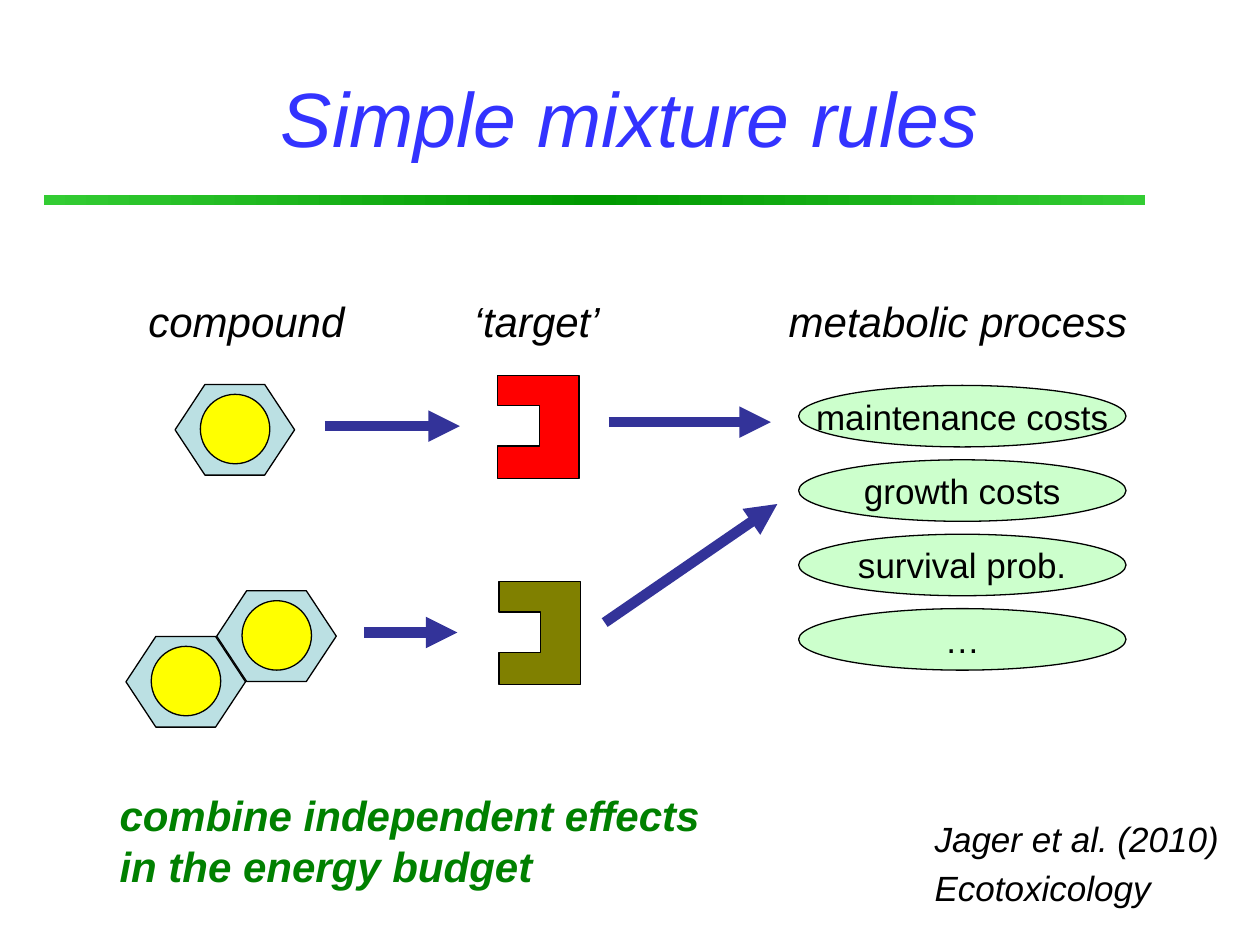
from copy import deepcopy

from lxml import etree
from pptx import Presentation
from pptx.dml.color import RGBColor
from pptx.enum.shapes import MSO_CONNECTOR, MSO_SHAPE
from pptx.enum.text import MSO_ANCHOR, PP_ALIGN
from pptx.oxml.ns import qn
from pptx.util import Cm, Pt

RECTANGLE, HEXAGON, OVAL = MSO_SHAPE.RECTANGLE, MSO_SHAPE.HEXAGON, MSO_SHAPE.OVAL
STRAIGHT = MSO_CONNECTOR.STRAIGHT
LEFT, CENTER = PP_ALIGN.LEFT, PP_ALIGN.CENTER
TOP, MIDDLE = MSO_ANCHOR.TOP, MSO_ANCHOR.MIDDLE

FONT = "Arial"
COLORS = {
    "title": "3333FF",
    "bar_edge": "33CC33",
    "bar_middle": "009900",
    "ink": "000000",
    "hexagon": "BBE0E3",
    "core": "FFFF00",
    "red_target": "FF0000",
    "olive_target": "808000",
    "arrow": "333399",
    "process": "CCFFCC",
    "takeaway": "008000",
}


def color(name):
    return RGBColor.from_string(COLORS[name])


def style_shape(shape, fill):
    shape.shadow.inherit = False
    shape.fill.solid()
    shape.fill.fore_color.rgb = color(fill)
    shape.line.color.rgb = color("ink")
    shape.line.width = Pt(0.75)


def add_shape(slide, kind, box, fill):
    shape = slide.shapes.add_shape(kind, *map(Cm, box))
    style_shape(shape, fill)
    return shape


def write_lines(shape, lines, size, ink="ink", bold=False, italic=True,
                align=LEFT, anchor=TOP, wrap=False, space_before=0):
    frame = shape.text_frame
    frame.text = "\n".join(lines)
    frame.word_wrap = wrap
    frame.vertical_anchor = anchor
    for paragraph in frame.paragraphs:
        paragraph.alignment = align
        paragraph.space_before = Pt(space_before)
        font = paragraph.font
        font.name, font.size = FONT, Pt(size)
        font.bold, font.italic = bold, italic
        font.color.rgb = color(ink)


def add_text(slide, box, lines, size, **options):
    write_lines(slide.shapes.add_textbox(*map(Cm, box)), lines, size, **options)


def add_arrow(slide, start, end):
    arrow = slide.shapes.add_connector(STRAIGHT, *map(Cm, start + end))
    arrow.line.color.rgb = color("arrow")
    arrow.line.width = Pt(6)
    etree.SubElement(arrow.line._get_or_add_ln(), qn("a:tailEnd"), type="triangle")
    etree.SubElement(arrow._element.spPr, qn("a:effectLst"))


def add_header(slide, left, top, width, height):
    """Title with a green gradient bar under it."""
    bar = slide.shapes.add_shape(
        RECTANGLE, Cm(left - 0.38), Cm(top + height), Cm(22.2), Cm(0.2))
    bar.shadow.inherit = False
    bar.line.fill.background()
    bar.fill.gradient()
    bar.fill.gradient_angle = 0
    for stop, name in zip(bar.fill.gradient_stops, ("bar_edge", "bar_middle")):
        stop.color.rgb = color(name)
    first, middle = bar._element.spPr.iter(qn("a:gs"))
    last = deepcopy(first)
    middle.addnext(last)
    for stop, position in ((first, 0), (middle, 50000), (last, 100000)):
        stop.set("pos", str(position))

    add_text(slide, (left, top, width, height), ["Simple mixture rules"], 44,
             ink="title", align=CENTER, anchor=MIDDLE, wrap=True)


def add_ring(slide, left, top):
    """Hexagon with a round core: one ring of a compound."""
    hexagon = add_shape(slide, HEXAGON, (left, top, 2.41, 1.83), "hexagon")
    hexagon.adjustments[0] = 0.33
    add_shape(slide, OVAL, (left + 0.51, top + 0.2, 1.4, 1.4), "core")


def add_target(slide, left, top, fill):
    """Block with a binding notch in its left side."""
    width, height, notch_depth, notch_top, notch_bottom = 1.64, 2.07, 0.84, 0.61, 1.42
    outline = [(0, 0), (width, 0), (width, height), (0, height),
               (0, notch_bottom), (notch_depth, notch_bottom),
               (notch_depth, notch_top), (0, notch_top)]
    points = [(Cm(left + x), Cm(top + y)) for x, y in outline]
    builder = slide.shapes.build_freeform(*points[0])
    builder.add_line_segments(points[1:], close=True)
    style_shape(builder.convert_to_shape(), fill)


def add_pathway(slide, left, top, rings, target, fill, arrows):
    """Compound, its target and the arrows, relative to the left and top."""
    for x, y in rings:
        add_ring(slide, left + x, top + y)
    add_target(slide, left + target[0], top + target[1], fill)
    for x1, y1, x2, y2 in arrows:
        add_arrow(slide, (left + x1, top + y1), (left + x2, top + y2))


def add_headings(slide, top):
    for left, width, heading in ((2.74, 4.52, "compound"), (9.3, 3.07, "‘target’"),
                                 (15.65, 7.42, "metabolic process")):
        add_text(slide, (left, top, width, 1.27), [heading], 24)


def add_processes(slide, left, top, width, height):
    """Column of metabolic processes at equal steps."""
    names = ("maintenance costs", "growth costs", "survival prob.", "…")
    oval_height = 1.24
    step = (height - oval_height) / (len(names) - 1)
    for row, name in enumerate(names):
        oval = add_shape(slide, OVAL, (left, top + row * step, width, oval_height),
                         "process")
        write_lines(oval, [name], 20, italic=False, align=CENTER, anchor=MIDDLE)


def add_footer(slide, left, top):
    """Takeaway on the left, citation on the right."""
    add_text(slide, (left, top, 12.32, 2.31),
             ["combine independent effects", "in the energy budget"], 24,
             ink="takeaway", bold=True)
    add_text(slide, (left + 16.43, top + 0.56, 6.27, 2.13),
             ["Jager et al. (2010)", "Ecotoxicology"], 20, space_before=4)


def main():
    presentation = Presentation()
    presentation.slide_width, presentation.slide_height = Cm(25.4), Cm(19.05)
    slide = presentation.slides.add_slide(presentation.slide_layouts[6])

    add_header(slide, 1.27, 0.76, 22.86, 3.18)
    add_headings(slide, 5.84)
    # Single-ring compound acting on maintenance
    add_pathway(slide, 2.54, 7.57, rings=[(0.99, 0.18)], target=(7.49, 0),
                fill="red_target",
                arrows=[(4.01, 1.02, 6.73, 1.02), (9.73, 0.94, 13, 0.94)])
    # Double-ring compound acting on growth
    add_pathway(slide, 2.54, 11.73, rings=[(1.83, 0.18), (0, 1.1)], target=(7.52, 0),
                fill="olive_target",
                arrows=[(4.8, 1.02, 6.68, 1.02), (9.65, 0.82, 13.13, -1.57)])
    add_processes(slide, 16.1, 7.77, 6.6, 5.74)
    add_footer(slide, 2.16, 15.8)

    presentation.save("out.pptx")


if __name__ == "__main__":
    main()
